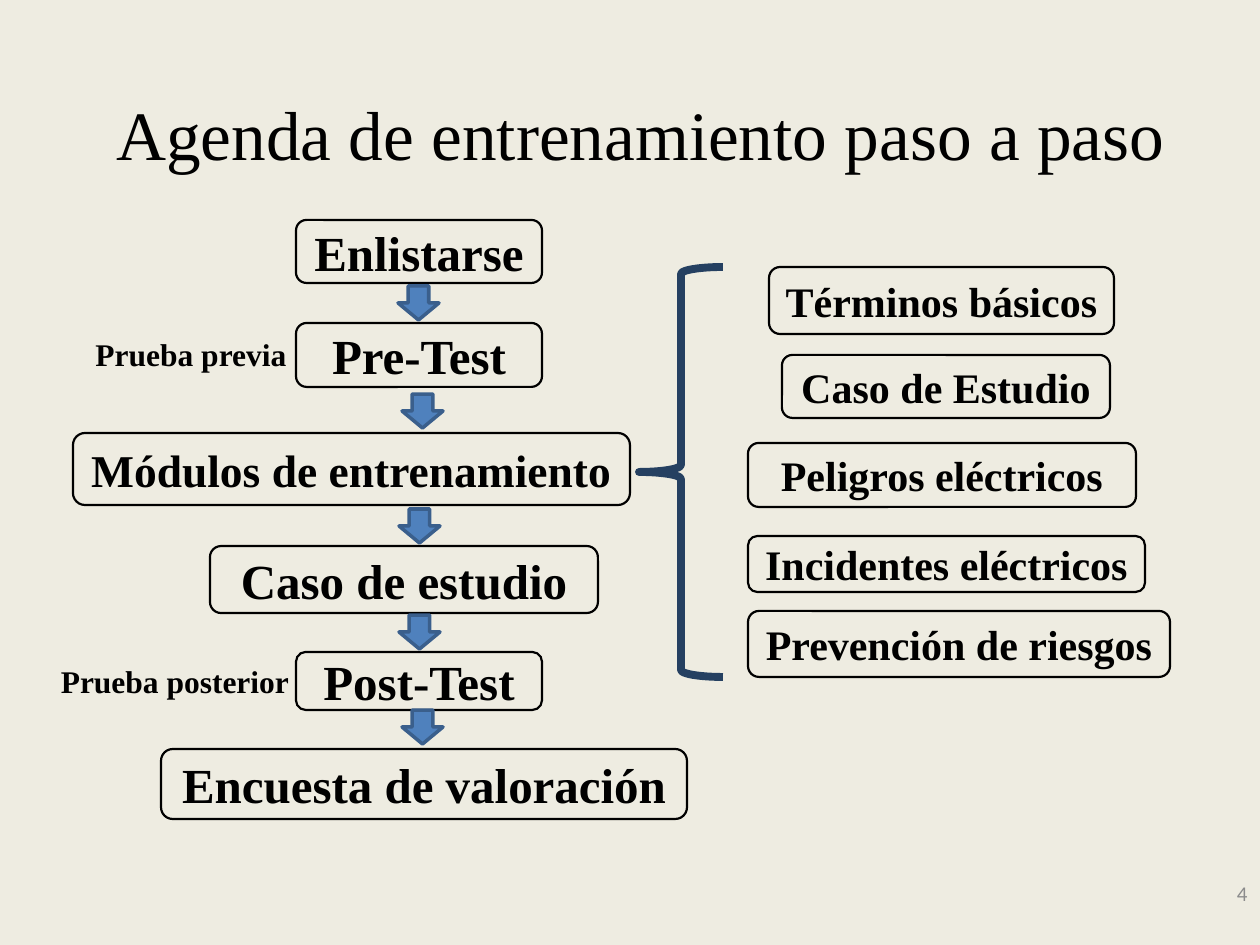
from pptx import Presentation
from pptx.dml.color import RGBColor
from pptx.enum.shapes import MSO_SHAPE
from pptx.enum.text import MSO_ANCHOR, PP_ALIGN
from pptx.util import Emu, Pt

COLORS = {
    "background": "EEECE1",
    "ink": "000000",
    "arrow": "4F81BD",
    "arrow_line": "3A5F8C",
    "brace": "254061",
    "number": "8C8C8C",
}
SERIF = "Times New Roman"

TITLE = ("Agenda de entrenamiento paso a paso", (47, 94, 1187, 78))
NUMBER = ("4", (976, 868, 284, 50))
STEPS = [
    ("Enlistarse", (296, 220, 246, 63), 28),
    ("Pre-Test", (296, 323, 246, 64), 28),
    ("Módulos de entrenamiento", (73, 433, 557, 72), 26),
    ("Caso de estudio", (210, 546, 388, 67), 28),
    ("Post-Test", (296, 652, 246, 58), 28),
    ("Encuesta de valoración", (161, 749, 526, 70), 28),
]
MODULES = [
    ("Términos básicos", (769, 267, 345, 67), 24),
    ("Caso de Estudio", (782, 355, 328, 63), 24),
    ("Peligros eléctricos", (748, 443, 388, 64), 24),
    ("Incidentes eléctricos", (748, 536, 397, 56), 24),
    ("Prevención de riesgos", (748, 611, 422, 66), 24),
]
NOTES = [
    ("Prueba previa", (82, 329, 218, 50)),
    ("Prueba posterior", (47, 656, 256, 50)),
]
ARROWS = [(398, 286), (402, 394), (399, 509), (399, 615), (402, 710)]
ARROW_SIZE = (41, 34)
BRACE = (639, 267, 84, 410)


def px(*values):
    return [Emu(round(v * 914400 / 126)) for v in values]


def rgb(name):
    return RGBColor.from_string(COLORS[name])


def write(sp, text, size, color="ink", font=SERIF, bold=False,
          align=PP_ALIGN.CENTER, anchor=MSO_ANCHOR.MIDDLE, wrap=True):
    tf = sp.text_frame
    tf.text = text
    tf.word_wrap = wrap
    tf.vertical_anchor = anchor
    p = tf.paragraphs[0]
    p.alignment = align
    f = p.runs[0].font
    f.name, f.size, f.bold = font, Pt(size), bold
    f.color.rgb = rgb(color)


def add_text(s, text, box, size, **style):
    write(s.shapes.add_textbox(*px(*box)), text, size, **style)


def add_shape(s, kind, box, line, width, fill=None):
    sp = s.shapes.add_shape(kind, *px(*box))
    sp.shadow.inherit = False
    if fill:
        sp.fill.solid()
        sp.fill.fore_color.rgb = rgb(fill)
    else:
        sp.fill.background()
    sp.line.color.rgb = rgb(line)
    sp.line.width = Pt(width)
    return sp


def main():
    prs = Presentation()
    prs.slide_width, prs.slide_height = px(1260, 945)
    s = prs.slides.add_slide(prs.slide_layouts[6])
    s.background.fill.solid()
    s.background.fill.fore_color.rgb = rgb("background")

    add_text(s, *TITLE, 39.6)
    add_text(s, *NUMBER, 12, color="number", font="Calibri", align=PP_ALIGN.RIGHT)

    for text, box, size in STEPS + MODULES:
        sp = add_shape(s, MSO_SHAPE.ROUNDED_RECTANGLE, box, "ink", 1.25)
        write(sp, text, size, bold=True)

    for corner in ARROWS:
        add_shape(s, MSO_SHAPE.DOWN_ARROW, corner + ARROW_SIZE, "arrow_line", 2, "arrow")
    add_shape(s, MSO_SHAPE.LEFT_BRACE, BRACE, "brace", 4.5)

    for text, box in NOTES:
        add_text(s, text, box, 18, bold=True, anchor=MSO_ANCHOR.TOP, wrap=False)

    prs.save("out.pptx")


if __name__ == "__main__":
    main()
